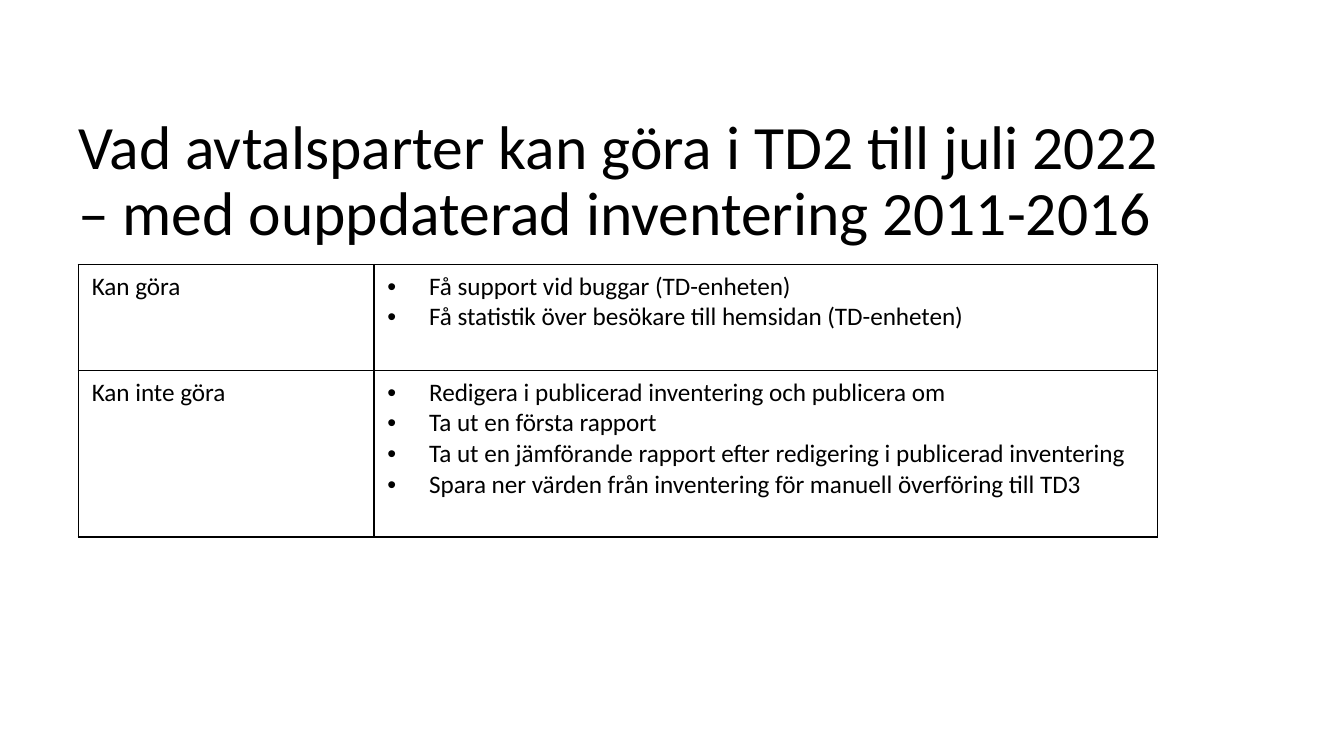
from dataclasses import dataclass

from lxml import etree
from pptx import Presentation
from pptx.dml.color import RGBColor
from pptx.enum.text import MSO_ANCHOR
from pptx.oxml.ns import qn
from pptx.util import Inches, Pt

MIDDLE = MSO_ANCHOR.MIDDLE
WIDTH = Inches(10)
HEIGHT = WIDTH * 9 // 16


@dataclass(frozen=True)
class Theme:
    font: str = "Calibri"
    ink: str = "000000"
    paper: str = "FFFFFF"
    title: float = 33
    body: float = 13.5
    line: float = 1
    indent: float = 0.31


class Deck:
    """Holds the theme and the current slide; lengths are percent of its size."""

    def __init__(self, theme):
        self.theme = theme
        self.file = Presentation()
        self.file.slide_width, self.file.slide_height = WIDTH, HEIGHT
        self.slide = self.file.slides.add_slide(self.file.slide_layouts[6])
        back = self.slide.background.fill
        back.solid()
        back.fore_color.rgb = RGBColor.from_string(theme.paper)

    def across(self, share):
        return int(share * WIDTH / 100)

    def down(self, share):
        return int(share * HEIGHT / 100)

    def box(self, left, top, width, height):
        return (self.across(left), self.down(top),
                self.across(width), self.down(height))

    def run(self, para, text, size):
        run = para.add_run()
        run.text = text
        run.font.name = self.theme.font
        run.font.size = Pt(size)
        run.font.color.rgb = RGBColor.from_string(self.theme.ink)

    def title(self, lines, *area):
        frame = self.slide.shapes.add_textbox(*self.box(*area)).text_frame
        frame.word_wrap = True
        frame.vertical_anchor = MIDDLE
        frame.margin_left = frame.margin_right = 0
        frame.margin_top = frame.margin_bottom = 0
        para = frame.paragraphs[0]
        para.line_spacing = 0.9
        for i, line in enumerate(lines):
            if i:
                para.add_line_break()
            self.run(para, line, self.theme.title)

    def bullet(self, para):
        props = para._p.get_or_add_pPr()
        indent = Inches(self.theme.indent)
        props.set("marL", str(indent))
        props.set("indent", str(-indent))
        etree.SubElement(props, qn("a:buFont")).set("typeface", "Arial")
        etree.SubElement(props, qn("a:buChar")).set("char", "•")

    def border(self, cell):
        props = cell._tc.get_or_add_tcPr()
        for i, side in enumerate(("lnL", "lnR", "lnT", "lnB")):
            line = etree.Element(qn(f"a:{side}"), w=str(Pt(self.theme.line)))
            fill = etree.SubElement(line, qn("a:solidFill"))
            etree.SubElement(fill, qn("a:srgbClr")).set("val", self.theme.ink)
            props.insert(i, line)

    def cell(self, cell, lines, marked):
        cell.fill.background()
        self.border(cell)
        frame = cell.text_frame
        for i, line in enumerate(lines):
            para = frame.add_paragraph() if i else frame.paragraphs[0]
            if marked:
                self.bullet(para)
            self.run(para, line, self.theme.body)

    def table(self, rows, left, top, cols, tall):
        area = self.box(left, top, sum(cols), sum(tall))
        table = self.slide.shapes.add_table(len(rows), len(cols), *area).table
        table.first_row = table.horz_banding = False
        for col, share in zip(table.columns, cols):
            col.width = self.across(share)
        for row, share, (label, points) in zip(table.rows, tall, rows):
            row.height = self.down(share)
            self.cell(row.cells[0], [label], False)
            self.cell(row.cells[1], points, True)


ROWS = [
    ("Kan göra", [
        "Få support vid buggar (TD-enheten)",
        "Få statistik över besökare till hemsidan (TD-enheten)",
    ]),
    ("Kan inte göra", [
        "Redigera i publicerad inventering och publicera om",
        "Ta ut en första rapport",
        "Ta ut en jämförande rapport efter redigering i publicerad inventering",
        "Spara ner värden från inventering för manuell överföring till TD3",
    ]),
]


def main():
    deck = Deck(Theme())
    left = 5.83
    deck.title(["Vad avtalsparter kan göra i TD2 till juli 2022",
                "– med ouppdaterad inventering 2011-2016"],
               left, 14.1, 88.3, 20.1)
    deck.table(ROWS, left, 35, cols=(22, 58.3), tall=(14, 22))
    deck.file.save("out.pptx")


if __name__ == "__main__":
    main()
